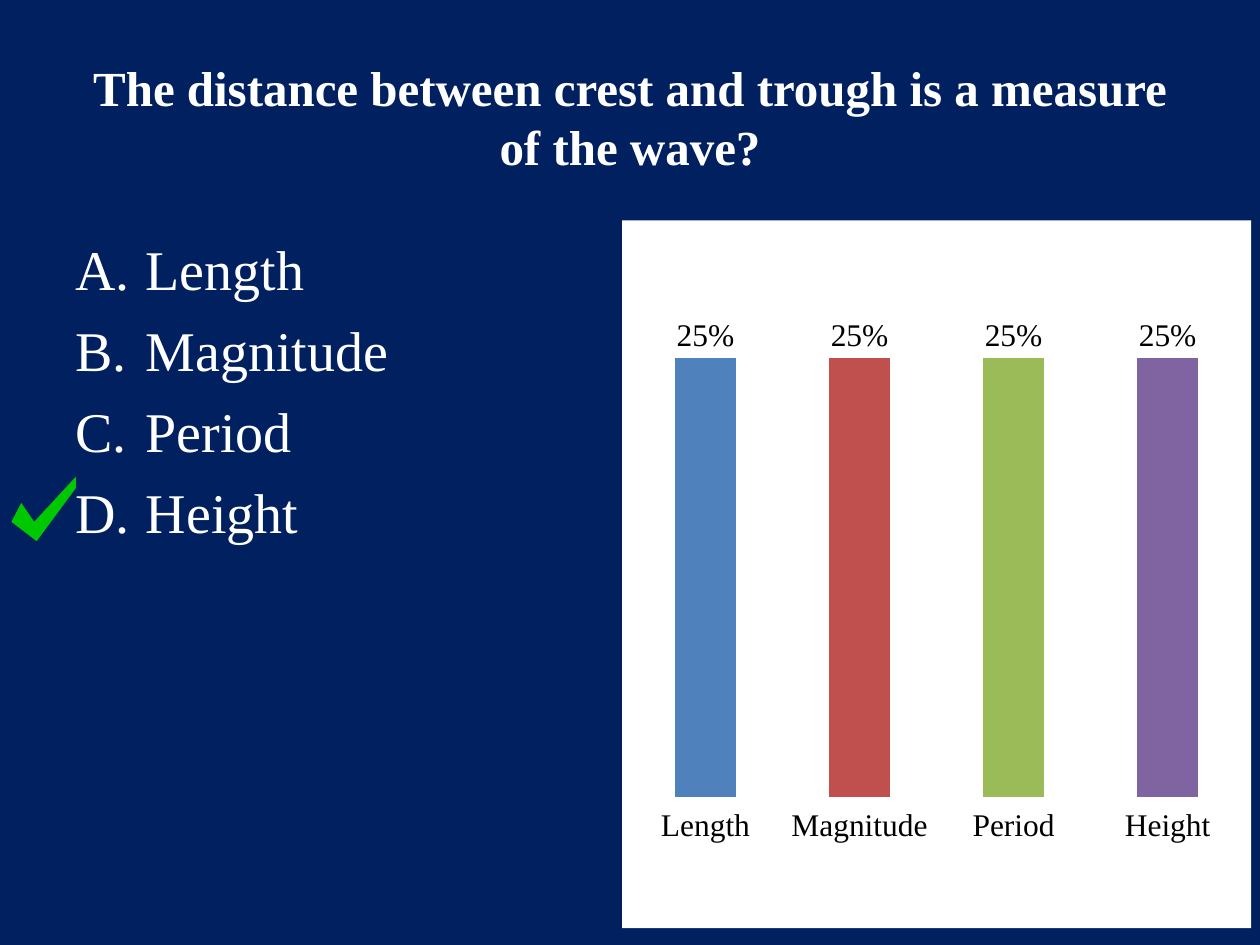
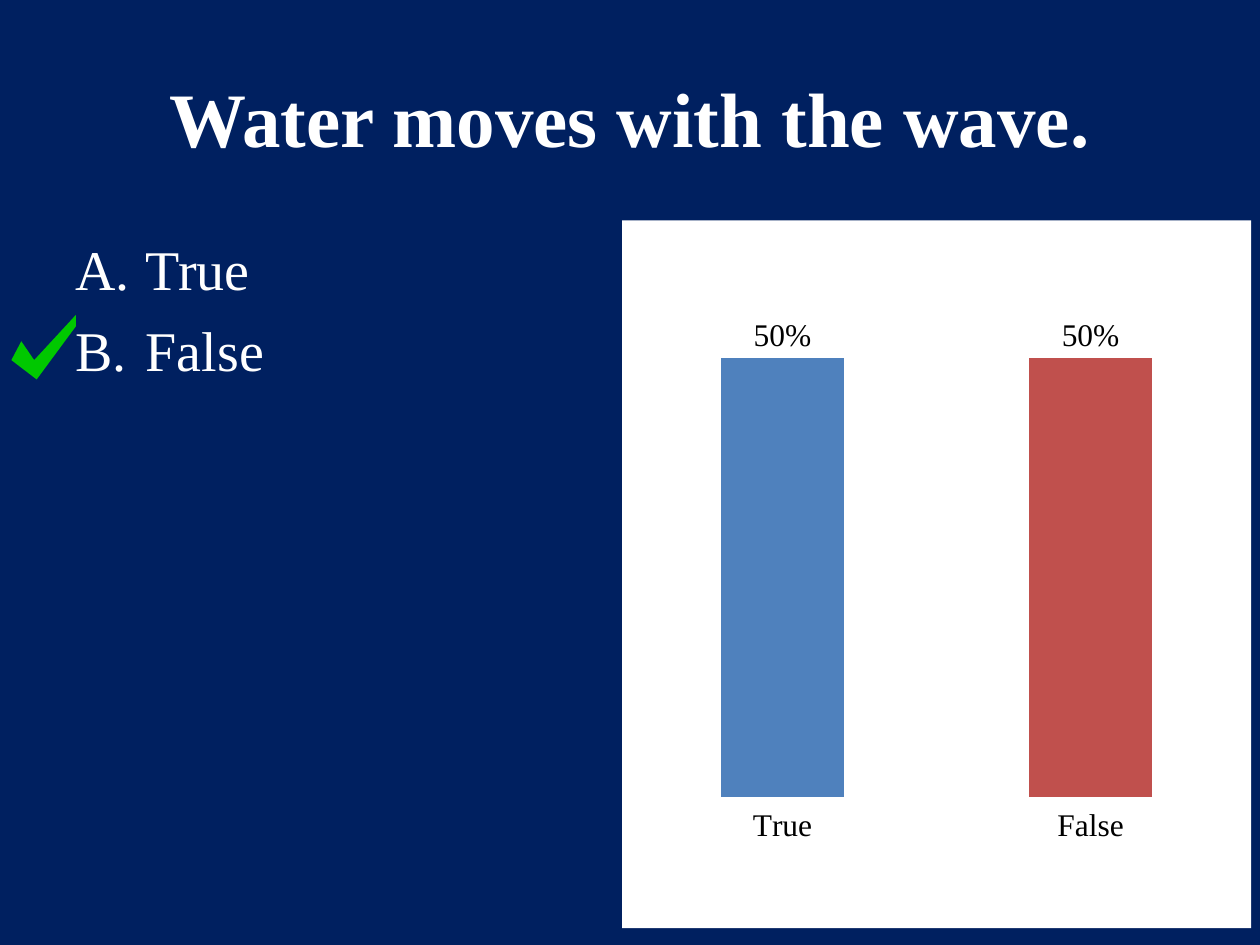
import pptx
import pptx.chart.data
import pptx.dml.color
import pptx.enum.chart
import pptx.enum.text
import pptx.oxml
import pptx.oxml.ns
import pptx.util

Cm, Pt = pptx.util.Cm, pptx.util.Pt
RGBColor = pptx.dml.color.RGBColor

QUESTIONS = [
    {"title": "The distance between crest and trough is a measure of the wave?",
     "title_size": 28,
     "answers": ["Length", "Magnitude", "Period", "Height"],
     "correct": "Height"},
    {"title": "Water moves with the wave.",
     "title_size": 44,
     "answers": ["True", "False"],
     "correct": "False"},
]

NAVY = RGBColor(0x00, 0x20, 0x60)
WHITE = RGBColor(0xFF, 0xFF, 0xFF)
BLACK = RGBColor(0x00, 0x00, 0x00)
GREEN = RGBColor(0x00, 0xC8, 0x00)
BAR_COLORS = [RGBColor(0x4F, 0x81, 0xBD), RGBColor(0xC0, 0x50, 0x4D),
              RGBColor(0x9B, 0xBB, 0x59), RGBColor(0x80, 0x64, 0xA2)]
FONT = "Times New Roman"

TITLE_AREA = (Cm(1.27), Cm(0.76), Cm(22.86), Cm(3.18))
ANSWER_AREA = (Cm(1.27), Cm(4.44), Cm(11.43), Cm(12.57))
CHART_AREA = (Cm(12.52), Cm(4.44), Cm(12.7), Cm(14.27))
ANSWER_INDENT = Cm(1.42)
CHECK_LEFT, CHECK_TOP, ANSWER_PITCH = 0.23, 4.72, 1.63
CHECK_OUTLINE = [(0.2, 0.53), (0, 0.91), (0.51, 1.3), (1.3, 0.23), (1.3, 0), (0.46, 0.91)]
PLOT_LAYOUT = {"xMode": "edge", "yMode": "edge", "x": 0.01, "y": 0.07, "w": 0.98, "h": 0.81}


def style_font(font, size, color, bold=False):
    font.name, font.size, font.bold = FONT, Pt(size), bold
    font.color.rgb = color


def fill_title(page, text, size):
    title = page.shapes.title
    title.left, title.top, title.width, title.height = TITLE_AREA
    frame = title.text_frame
    frame.text = text
    frame.word_wrap = True
    frame.auto_size = pptx.enum.text.MSO_AUTO_SIZE.NONE
    frame.vertical_anchor = pptx.enum.text.MSO_ANCHOR.MIDDLE
    para = frame.paragraphs[0]
    para.alignment = pptx.enum.text.PP_ALIGN.CENTER
    style_font(para.runs[0].font, size, WHITE, True)


def add_answers(page, answers):
    frame = page.shapes.add_textbox(*ANSWER_AREA).text_frame
    frame.word_wrap = True
    frame.margin_top = Cm(0.28)
    frame.text = "\n".join(answers)
    for index, para in enumerate(frame.paragraphs):
        if index:
            para.space_before = Pt(8)
        properties = para._p.get_or_add_pPr()
        properties.set("marL", str(ANSWER_INDENT))
        properties.set("indent", str(-ANSWER_INDENT))
        bullet = pptx.oxml.parse_xml(
            f'<a:buAutoNum {pptx.oxml.ns.nsdecls("a")} type="alphaUcPeriod"/>')
        properties.append(bullet)
        style_font(para.runs[0].font, 32, WHITE)


def add_check(page, row):
    top = CHECK_TOP + row * ANSWER_PITCH
    points = [(Cm(CHECK_LEFT + x), Cm(top + y)) for x, y in CHECK_OUTLINE]
    builder = page.shapes.build_freeform(*points[0])
    builder.add_line_segments(points[1:], close=True)
    check = builder.convert_to_shape()
    check.shadow.inherit = False
    check.fill.solid()
    check.fill.fore_color.rgb = GREEN
    check.line.fill.background()


def frame_chart(chart):
    """Paint the chart area white and place the plot inside it."""
    names = pptx.oxml.ns.nsdecls("c", "a")
    chart_node = chart.element.find(pptx.oxml.ns.qn("c:chart"))
    plot_area = chart_node.find(pptx.oxml.ns.qn("c:plotArea"))
    for layout in plot_area.findall(pptx.oxml.ns.qn("c:layout")):
        plot_area.remove(layout)
    settings = "".join(f'<c:{key} val="{value}"/>' for key, value in PLOT_LAYOUT.items())
    plot_area.insert(0, pptx.oxml.parse_xml(
        f"<c:layout {names}><c:manualLayout>{settings}</c:manualLayout></c:layout>"))
    chart_node.addnext(pptx.oxml.parse_xml(
        f'<c:spPr {names}><a:solidFill><a:srgbClr val="{WHITE}"/></a:solidFill>'
        "<a:ln><a:noFill/></a:ln></c:spPr>"))


def add_votes(page, answers):
    share = 1 / len(answers)
    votes = pptx.chart.data.CategoryChartData(number_format="0%")
    votes.categories = answers
    votes.add_series("Series 1", [share] * len(answers))
    chart = page.shapes.add_chart(
        pptx.enum.chart.XL_CHART_TYPE.COLUMN_CLUSTERED, *CHART_AREA, votes).chart
    chart.has_legend = False
    chart.has_title = False
    style_font(chart.font, 18, BLACK)
    for axis in (chart.category_axis, chart.value_axis):
        axis.has_major_gridlines = False
        axis.format.line.fill.background()
    scale = chart.value_axis
    scale.minimum_scale, scale.maximum_scale = 0, round(share * 1.2, 2)
    scale.tick_label_position = pptx.enum.chart.XL_TICK_LABEL_POSITION.NONE
    plot = chart.plots[0]
    plot.gap_width = 150
    plot.vary_by_categories = False
    plot.has_data_labels = True
    labels = plot.data_labels
    labels.show_value = True
    labels.number_format, labels.number_format_is_linked = "0%", False
    labels.position = pptx.enum.chart.XL_LABEL_POSITION.OUTSIDE_END
    style_font(labels.font, 18, BLACK)
    for index, color in enumerate(BAR_COLORS[:len(answers)]):
        fill = plot.series[0].points[index].format.fill
        fill.solid()
        fill.fore_color.rgb = color
    frame_chart(chart)


def main():
    deck = pptx.Presentation()
    deck.slide_width, deck.slide_height = Cm(25.4), Cm(19.05)
    background = deck.slide_master.background.fill
    background.solid()
    background.fore_color.rgb = NAVY
    for question in QUESTIONS:
        answers = question["answers"]
        page = deck.slides.add_slide(deck.slide_layouts.get_by_name("Title Only"))
        fill_title(page, question["title"], question["title_size"])
        add_votes(page, answers)
        add_answers(page, answers)
        add_check(page, answers.index(question["correct"]))
    deck.save("out.pptx")


if __name__ == "__main__":
    main()
